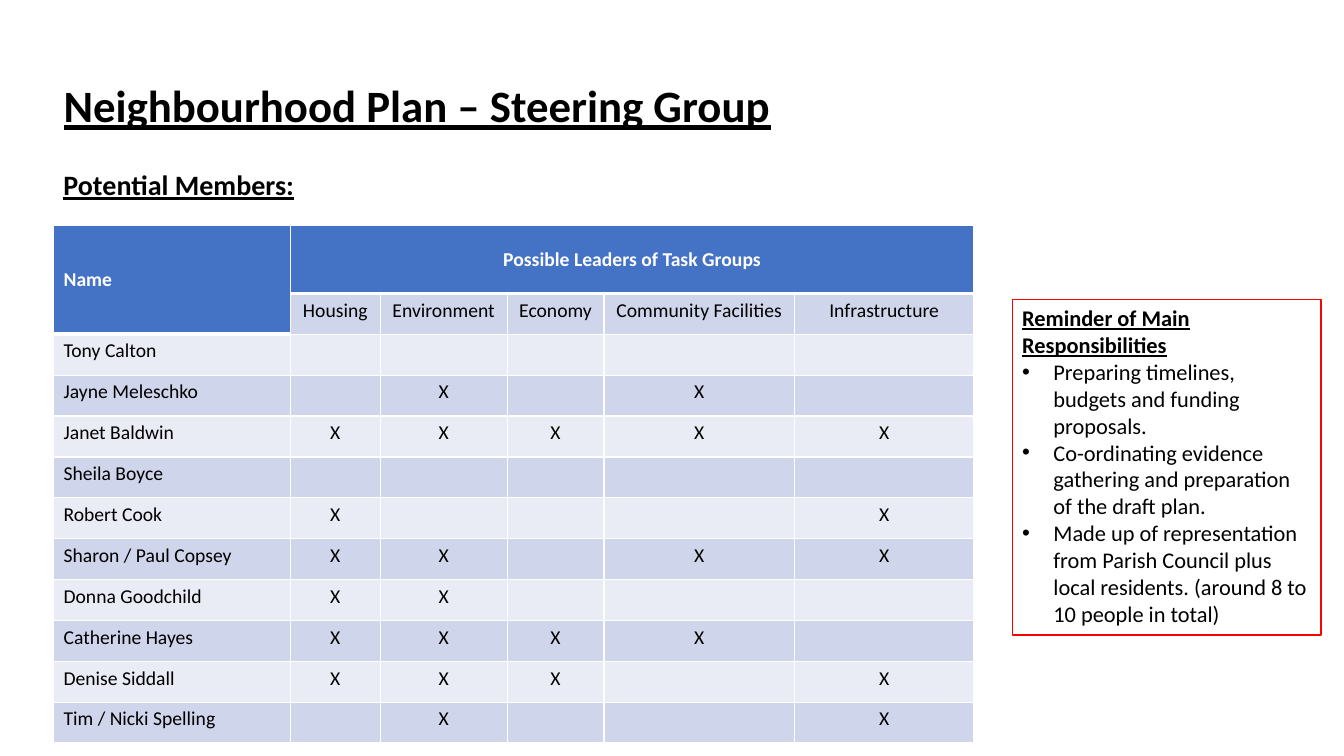
from dataclasses import dataclass

from lxml.etree import SubElement as Sub
from pptx import Presentation
from pptx.dml.color import RGBColor
from pptx.enum.shapes import MSO_SHAPE as Kind
from pptx.enum.text import MSO_ANCHOR as Anchor, MSO_AUTO_SIZE as Fit, PP_ALIGN as Align
from pptx.oxml.ns import qn
from pptx.util import Emu, Inches, Pt

WIDE, HIGH = Inches(13.33), Inches(7.5)
FONT = "Calibri"
BLACK, WHITE, RED, BLUE = "000000", "FFFFFF", "FF0000", "4472C4"
BANDS = ("E9EBF5", "CFD5EA")
COLS = (17.63, 6.68, 9.45, 7.2, 14.18, 13.35)
HEAD, ROW = 8.95, 5.41
GROUPS = ("Housing", "Environment", "Economy", "Community Facilities", "Infrastructure")
DUTIES = (
    "Preparing timelines, budgets and funding proposals.",
    "Co-ordinating evidence gathering and preparation of the draft plan.",
    "Made up of representation from Parish Council plus local residents. "
    "(around 8 to 10 people in total)",
)


@dataclass(frozen=True)
class Box:
    """Place and size in percent of the slide."""
    left: float
    top: float
    width: float
    height: float


@dataclass(frozen=True)
class Member:
    """A person and the task groups, by column, they may lead."""
    name: str
    leads: tuple[int, ...] = ()


MEMBERS = (
    Member("Tony Calton"),
    Member("Jayne Meleschko", (2, 4)),
    Member("Janet Baldwin", (1, 2, 3, 4, 5)),
    Member("Sheila Boyce"),
    Member("Robert Cook", (1, 5)),
    Member("Sharon / Paul Copsey", (1, 2, 4, 5)),
    Member("Donna Goodchild", (1, 2)),
    Member("Catherine Hayes", (1, 2, 3, 4)),
    Member("Denise Siddall", (1, 2, 3, 5)),
    Member("Tim / Nicki Spelling", (2, 5)),
)
TITLE = Box(3.98, 4.67, 86.27, 19.33)
LABEL = Box(3.98, 22, 22.13, 6.53)
NOTE = Box(75.32, 39.6, 22.96, 44.4)
GRID = Box(3.98, 29.87, sum(COLS), HEAD + ROW * (len(MEMBERS) + 1))


def hue(code: str) -> RGBColor:
    """Turn a hex string into a colour."""
    return RGBColor.from_string(code)


def across(part: float) -> Emu:
    """Give a percentage of the slide width."""
    return Emu(round(WIDE * part / 100))


def down(part: float) -> Emu:
    """Give a percentage of the slide height."""
    return Emu(round(HIGH * part / 100))


def area(box: Box) -> tuple[Emu, Emu, Emu, Emu]:
    """Give a box as slide lengths."""
    return across(box.left), down(box.top), across(box.width), down(box.height)


def write(para, text: str, size: int, bold=False, under=False, code=BLACK, align=Align.LEFT) -> None:
    """Add one run of text to a paragraph."""
    para.alignment = align
    run = para.add_run()
    run.text = text
    font = run.font
    font.name, font.size, font.bold, font.underline = FONT, Pt(size), bold, under
    font.color.rgb = hue(code)


def head(shape, box: Box, text: str, size: int, anchor: Anchor) -> None:
    """Place and fill an underlined heading."""
    shape.left, shape.top, shape.width, shape.height = area(box)
    frame = shape.text_frame
    frame.word_wrap, frame.auto_size, frame.vertical_anchor = True, Fit.NONE, anchor
    para = frame.paragraphs[0]
    para.line_spacing = 0.9
    write(para, text, size, bold=True, under=True)


def bullet(para) -> None:
    """Give a paragraph a hanging bullet."""
    props = para._p.get_or_add_pPr()
    props.set("marL", str(Inches(0.31)))
    props.set("indent", str(-Inches(0.31)))
    Sub(props, qn("a:buFont"), typeface="Arial")
    Sub(props, qn("a:buChar"), char="•")


def remind(slide) -> None:
    """Draw the framed list of duties."""
    shape = slide.shapes.add_shape(Kind.RECTANGLE, *area(NOTE))
    shape.shadow.inherit = False
    shape.fill.background()
    shape.line.color.rgb = hue(RED)
    shape.line.width = Pt(1)
    frame = shape.text_frame
    frame.word_wrap, frame.vertical_anchor = True, Anchor.TOP
    frame.auto_size = Fit.SHAPE_TO_FIT_TEXT
    write(frame.paragraphs[0], "Reminder of Main Responsibilities", 16, bold=True, under=True)
    for duty in DUTIES:
        para = frame.add_paragraph()
        bullet(para)
        write(para, duty, 16)


def paint(cell, code: str, base: int) -> None:
    """Give a cell white borders and a fill."""
    props = cell._tc.get_or_add_tcPr()
    for side, width in (("L", 1), ("R", 1), ("T", 1), ("B", base)):
        line = Sub(props, qn(f"a:ln{side}"), w=str(Pt(width)))
        Sub(Sub(line, qn("a:solidFill")), qn("a:srgbClr"), val=WHITE)
    cell.fill.solid()
    cell.fill.fore_color.rgb = hue(code)


def roster(slide) -> None:
    """Draw the table of members and task groups."""
    table = slide.shapes.add_table(len(MEMBERS) + 2, len(COLS), *area(GRID)).table
    table.first_row = table.horz_banding = False
    for col, width in zip(table.columns, COLS):
        col.width = across(width)
    for i, row in enumerate(table.rows):
        row.height = down(ROW if i else HEAD)
        for j, cell in enumerate(row.cells):
            blue = i == 0 or (i == 1 and j == 0)
            paint(cell, BLUE if blue else BANDS[i % 2], 1 if i else 3)
    name, lead = table.cell(0, 0), table.cell(0, 1)
    name.merge(table.cell(1, 0))
    lead.merge(table.cell(0, len(COLS) - 1))
    for cell, text, align in ((name, "Name", Align.LEFT),
                              (lead, "Possible Leaders of Task Groups", Align.CENTER)):
        cell.vertical_anchor = Anchor.MIDDLE
        write(cell.text_frame.paragraphs[0], text, 14, bold=True, code=WHITE, align=align)
    marks = [(1, j, text) for j, text in enumerate(GROUPS, 1)]
    for i, member in enumerate(MEMBERS, 2):
        marks += [(i, 0, member.name)] + [(i, j, "X") for j in member.leads]
    for i, j, text in marks:
        para = table.cell(i, j).text_frame.paragraphs[0]
        write(para, text, 14, align=Align.CENTER if j else Align.LEFT)


def main() -> None:
    """Build and save the slide."""
    deck = Presentation()
    deck.slide_width, deck.slide_height = WIDE, HIGH
    slide = deck.slides.add_slide(deck.slide_layouts[5])
    head(slide.shapes.title, TITLE, "Neighbourhood Plan – Steering Group", 32, Anchor.MIDDLE)
    label = slide.shapes.add_textbox(*area(LABEL))
    head(label, LABEL, "Potential Members:", 20, Anchor.TOP)
    remind(slide)
    roster(slide)
    deck.save("out.pptx")


if __name__ == "__main__":
    main()
